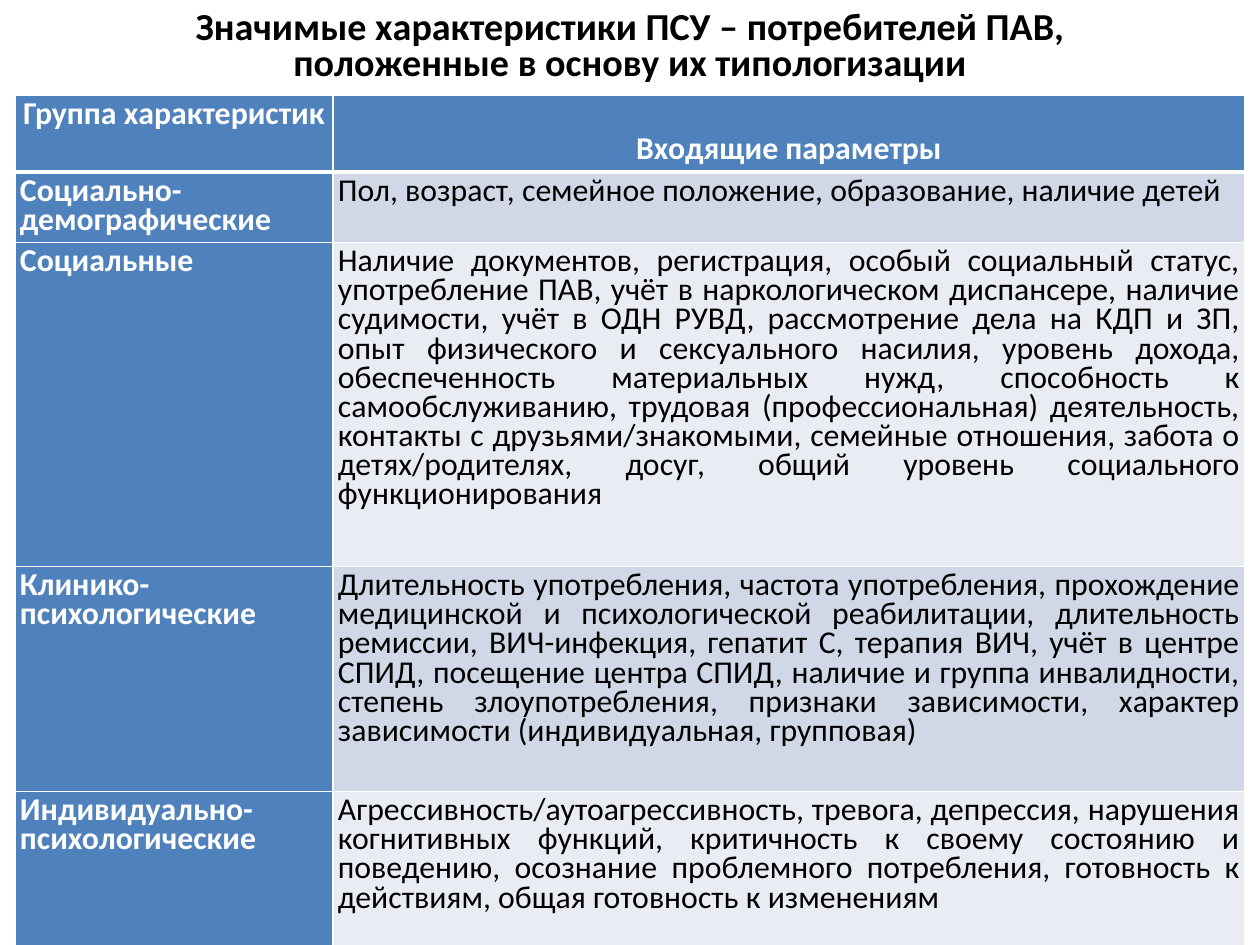
from lxml import etree
from pptx import Presentation, util as u
from pptx.dml import color
from pptx.enum import text
from pptx.oxml import ns

PX = 8000
FONT = "Calibri"
WHITE, BLACK, BLUE = "FFFFFF", "000000", "4F81BD"
BANDS = ("D0D8E7", "E9ECF3")
COLUMN_WIDTHS = (318, 912)
ROW_HEIGHTS = (77, 69, 324, 225, 155)
TITLE = "Значимые характеристики ПСУ – потребителей ПАВ,\nположенные в основу их типологизации"
ROWS = (
    ("Группа характеристик", "Входящие параметры"),
    ("Социально-демографические",
     "Пол, возраст, семейное положение, образование, наличие детей"),
    ("Социальные",
     "Наличие документов, регистрация, особый социальный статус, "
     "употребление ПАВ, учёт в наркологическом диспансере, наличие судимости, "
     "учёт в ОДН РУВД, рассмотрение дела на КДП и ЗП, опыт физического и "
     "сексуального насилия, уровень дохода, обеспеченность материальных нужд, "
     "способность к самообслуживанию, трудовая (профессиональная) деятельность, "
     "контакты с друзьями/знакомыми, семейные отношения, забота о "
     "детях/родителях, досуг, общий уровень социального функционирования"),
    ("Клинико-психологические",
     "Длительность употребления, частота употребления, прохождение медицинской "
     "и психологической реабилитации, длительность ремиссии, ВИЧ-инфекция, "
     "гепатит С, терапия ВИЧ, учёт в центре СПИД, посещение центра СПИД, "
     "наличие и группа инвалидности, степень злоупотребления, признаки "
     "зависимости, характер зависимости (индивидуальная, групповая)"),
    ("Индивидуально-психологические",
     "Агрессивность/аутоагрессивность, тревога, депрессия, нарушения "
     "когнитивных функций, критичность к своему состоянию и поведению, "
     "осознание проблемного потребления, готовность к действиям, общая "
     "готовность к изменениям"),
)


def px(value):
    """Turn px into EMU."""
    return u.Emu(value * PX)


def rgb(value):
    """Turn a hex string into a colour."""
    return color.RGBColor.from_string(value)


def write(frame, content, size, hue, bold, align, spacing):
    """Fill a text frame and format all its paragraphs."""
    frame.text = content
    frame.word_wrap = True
    for paragraph in frame.paragraphs:
        paragraph.alignment = align
        paragraph.line_spacing = spacing
        for run in paragraph.runs:
            run.font.name = FONT
            run.font.size = u.Pt(size)
            run.font.bold = bold
            run.font.color.rgb = rgb(hue)


def set_borders(cell, top, bottom):
    """Draw white borders on the four sides of a cell."""
    properties = cell._tc.get_or_add_tcPr()
    for side, width in (("L", 0.96), ("R", 0.96), ("T", top), ("B", bottom)):
        line = etree.SubElement(properties, ns.qn(f"a:ln{side}"), w=str(u.Pt(width)))
        fill = etree.SubElement(line, ns.qn("a:solidFill"))
        etree.SubElement(fill, ns.qn("a:srgbClr"), val=WHITE)


def add_title(slide, left, top, width, height):
    """Place the two-line title."""
    frame = slide.shapes.add_textbox(px(left), px(top), px(width), px(height)).text_frame
    write(frame, TITLE, 24, BLACK, True, text.PP_ALIGN.CENTER, 0.8)
    frame.vertical_anchor = text.MSO_ANCHOR.MIDDLE


def add_characteristics(slide, left, top, width, height):
    """Place the table of characteristic groups."""
    table = slide.shapes.add_table(len(ROWS), len(COLUMN_WIDTHS), px(left), px(top),
                                   px(width), px(height)).table
    for column, column_width in zip(table.columns, COLUMN_WIDTHS):
        column.width = px(column_width)
    for i, (row, row_height) in enumerate(zip(table.rows, ROW_HEIGHTS)):
        row.height = px(row_height)
        for j, cell in enumerate(row.cells):
            header = i == 0
            strong = header or j == 0
            set_borders(cell, 3 if i == 1 else 0.96, 3 if header else 0.96)
            cell.fill.solid()
            cell.fill.fore_color.rgb = rgb(BLUE if strong else BANDS[(i - 1) % 2])
            cell.margin_left = cell.margin_right = px(5)
            cell.margin_top = px(41 if header and j == 1 else 6)
            cell.margin_bottom = px(6)
            align = text.PP_ALIGN.CENTER if header else text.PP_ALIGN.JUSTIFY
            write(cell.text_frame, ROWS[i][j], 20, WHITE if strong else BLACK,
                  strong, align, 0.75)


def main():
    """Build the slide and save it."""
    presentation = Presentation()
    presentation.slide_width, presentation.slide_height = px(1260), px(945)
    slide = presentation.slides.add_slide(presentation.slide_layouts[6])
    add_characteristics(slide, 15, 95, sum(COLUMN_WIDTHS), sum(ROW_HEIGHTS))
    add_title(slide, 0, 5, 1260, 85)
    presentation.save("out.pptx")


if __name__ == "__main__":
    main()
